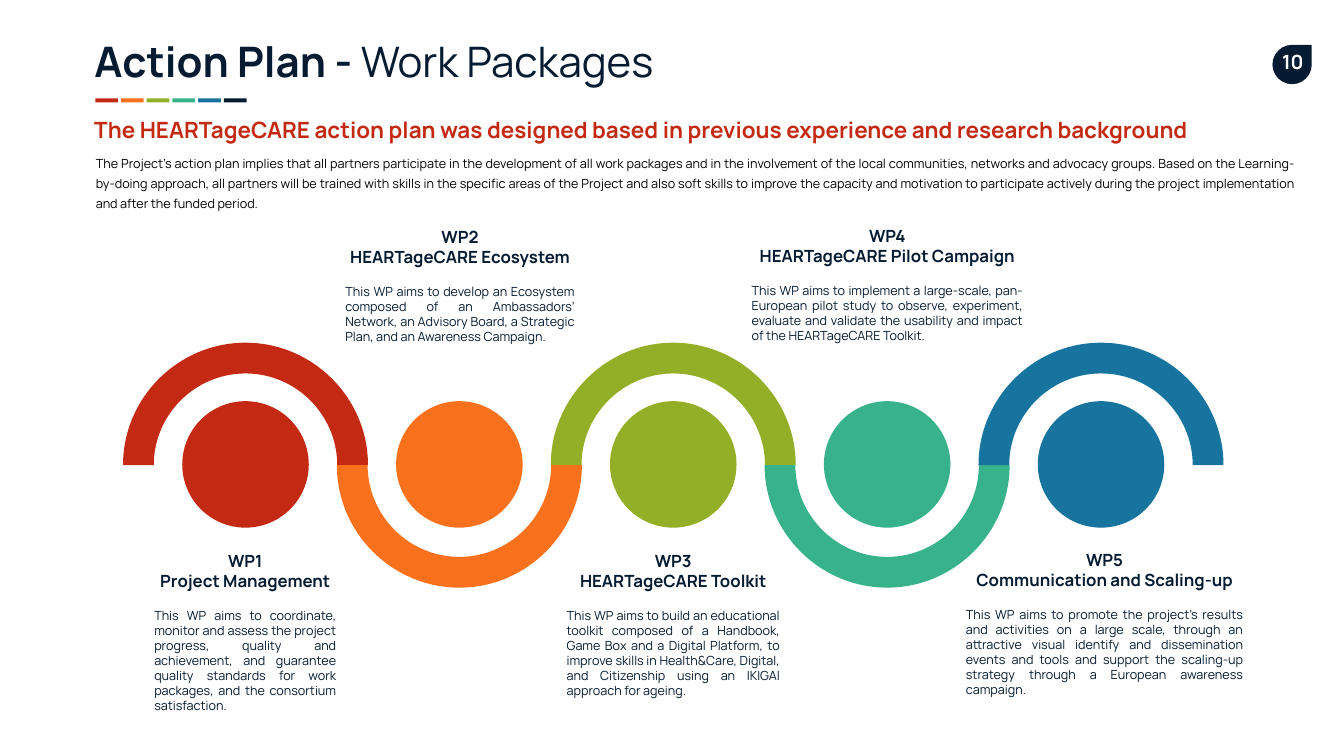
from lxml.etree import Element, SubElement
from pptx import Presentation
from pptx.dml.color import RGBColor
from pptx.enum.shapes import MSO_SHAPE
from pptx.enum.text import MSO_ANCHOR, PP_ALIGN
from pptx.oxml.ns import qn
from pptx.util import Inches, Pt

COLORS = {
    "red": "C42A13",
    "orange": "F9711C",
    "olive": "92AF27",
    "green": "38B28A",
    "blue": "16749F",
    "navy": "041B31",
    "white": "FFFFFF",
    "black": "000000",
}

# Name, description, text box (left, top, width, height), colour
WORK_PACKAGES = [
    ("Project Management",
     "This WP aims to coordinate, monitor and assess the project progress, quality and "
     "achievement, and guarantee quality standards for work packages, and the consortium "
     "satisfaction.",
     (3.06, 10.92, 3.61, 3.66), "red"),
    ("HEARTageCARE Ecosystem",
     "This WP aims to develop an Ecosystem composed of an Ambassadors’ Network, an Advisory "
     "Board, a Strategic Plan, and an Awareness Campaign.",
     (6.85, 4.49, 4.55, 2.84), "orange"),
    ("HEARTageCARE Toolkit",
     "This WP aims to build an educational toolkit composed of a Handbook, Game Box and a "
     "Digital Platform, to improve skills in Health&Care, Digital, and Citizenship using an "
     "IKIGAI approach for ageing.",
     (11.24, 10.92, 4.23, 3.62), "olive"),
    ("HEARTageCARE Pilot Campaign",
     "This WP aims to implement a large-scale, pan-European pilot study to observe, "
     "experiment, evaluate and validate the usability and impact of the HEARTageCARE Toolkit.",
     (14.91, 4.48, 5.38, 2.98), "green"),
    ("Communication and Scaling-up",
     "This WP aims to promote the project’s results and activities on a large scale, through "
     "an attractive visual identify and dissemination events and tools and support the "
     "scaling-up strategy through a European awareness campaign.",
     (19.16, 10.9, 5.5, 3.65), "blue"),
]

INTRO = (
    "The Project’s action plan implies that all partners participate in the development of all "
    "work packages and in the involvement of the local communities, networks and advocacy "
    "groups. Based on the Learning-by-doing approach, all partners will be trained with skills "
    "in the specific areas of the Project and also soft skills to improve the capacity and "
    "motivation to participate actively during the project implementation and after the "
    "funded period."
)

FIRST_CENTER, LAST_CENTER, CENTER_Y = 4.87, 21.84, 9.23
PITCH = (LAST_CENTER - FIRST_CENTER) / (len(WORK_PACKAGES) - 1)
OUTER_RADIUS, INNER_RADIUS = 2.43, 1.82
DISC, DISC_TOP = 2.51, 7.96
CURVE = 0.55  # control point distance of a quarter circle, as a share of its radius


class SlideBuilder:
    font = "Manrope"

    def __init__(self, slide):
        self.slide = slide

    def paint(self, shape, color):
        shape.shadow.inherit = False
        shape.fill.solid()
        shape.fill.fore_color.rgb = RGBColor.from_string(COLORS[color])
        shape.line.fill.background()

    def shape(self, kind, box, color, parent=None):
        shapes = (parent or self.slide).shapes
        shape = shapes.add_shape(kind, *map(Inches, box))
        self.paint(shape, color)
        return shape

    def half_ring(self, center_x, color, direction):
        """Draw half a ring, above the centre line (-1) or below it (1)."""
        corners = []
        for radius, side in ((OUTER_RADIUS, -1), (INNER_RADIUS, 1)):
            corners += [(center_x + side * radius, CENTER_Y),
                        (center_x, CENTER_Y + direction * radius),
                        (center_x - side * radius, CENTER_Y)]
        points = [(Inches(x), Inches(y)) for x, y in corners]
        builder = self.slide.shapes.build_freeform(*points[0])
        builder.add_line_segments(points[1:], close=True)
        ring = builder.convert_to_shape()
        self.paint(ring, color)

        # Bend the four sides that belong to the two arcs
        lines = list(ring._element.iter(qn("a:lnTo")))
        local = [(x - ring.left, y - ring.top) for x, y in points]
        for index in (0, 1, 3, 4):
            self.bend(lines[index], local[index], local[index + 1], index in (0, 3))

    def bend(self, line, start, end, leaves_upright):
        """Turn a straight side into a quarter circle."""
        (x1, y1), (x2, y2) = start, end
        run, rise = (x2 - x1) * CURVE, (y2 - y1) * CURVE
        if leaves_upright:
            controls = [(x1, y1 + rise), (x2 - run, y2)]
        else:
            controls = [(x1 + run, y1), (x2, y2 - rise)]
        curve = Element(qn("a:cubicBezTo"))
        for x, y in controls + [end]:
            SubElement(curve, qn("a:pt"), x=str(round(x)), y=str(round(y)))
        line.getparent().replace(line, curve)

    def style(self, paragraph, size, color="navy", bold=False, align=PP_ALIGN.LEFT):
        paragraph.alignment = align
        for run in paragraph.runs:
            run.font.name = self.font
            run.font.size = Pt(size)
            run.font.bold = bold
            run.font.color.rgb = RGBColor.from_string(COLORS[color])

    def text_box(self, box, text, inset=None):
        text_box = self.slide.shapes.add_textbox(*map(Inches, box))
        frame = text_box.text_frame
        frame.word_wrap = True
        if inset is not None:
            frame.margin_left = frame.margin_right = Inches(inset)
            frame.margin_top = frame.margin_bottom = Inches(inset)
        frame.text = text
        return frame

    def placeholder(self, index, box):
        placeholder = self.slide.placeholders[index]
        placeholder.left, placeholder.top, placeholder.width, placeholder.height = map(Inches, box)
        frame = placeholder.text_frame
        frame.word_wrap = True
        frame.vertical_anchor = MSO_ANCHOR.TOP
        return frame

    def title(self, box, strong, light):
        paragraph = self.placeholder(0, box).paragraphs[0]
        for text in (strong, light):
            paragraph.add_run().text = text
        self.style(paragraph, 60)
        paragraph.runs[0].font.bold = True

    def body(self, box, text):
        frame = self.placeholder(1, box)
        frame.text = text
        paragraph = frame.paragraphs[0]
        self.style(paragraph, 18, "black", align=PP_ALIGN.JUSTIFY)
        paragraph.line_spacing = 1.3
        paragraph.space_before = Pt(0)
        properties = paragraph._p.get_or_add_pPr()
        properties.set("marL", "0")
        properties.set("indent", "0")
        SubElement(properties, qn("a:buNone"))

    def work_package(self, number, name, description, box):
        frame = self.text_box(box, f"WP{number}\n{name}\n{description}", inset=0)
        *headings, detail = frame.paragraphs
        for heading in headings:
            self.style(heading, 24, bold=True, align=PP_ALIGN.CENTER)
        self.style(detail, 18, align=PP_ALIGN.JUSTIFY)
        detail.space_before = Pt(24)


def main():
    presentation = Presentation()
    presentation.slide_width, presentation.slide_height = Inches(26.66), Inches(15)
    slide = presentation.slides.add_slide(presentation.slide_layouts[1])
    builder = SlideBuilder(slide)

    # Title, subtitle and introduction
    builder.title((1.77, 0.65, 14.71, 1.11), "Action Plan - ", "Work Packages")
    subtitle = builder.text_box(
        (1.77, 2.25, 24.89, 0.64),
        "The HEARTageCARE action plan was designed based in previous experience and "
        "research background")
    builder.style(subtitle.paragraphs[0], 32, "red", bold=True)
    builder.body((1.8, 2.96, 23.99, 1.24), INTRO)

    # Colour bars under the title
    bars = slide.shapes.add_group_shape()
    for index, color in enumerate(["red", "orange", "olive", "green", "blue", "navy"]):
        builder.shape(MSO_SHAPE.RECTANGLE, (1.89 + 0.51 * index, 1.95, 0.45, 0.08), color, bars)

    # Page number
    builder.shape(MSO_SHAPE.TEAR, (25.24, 0.89, 0.78, 0.78), "navy")
    page_number = builder.text_box((25.16, 0.9, 0.97, 0.67), "10", inset=0.1)
    page_number.margin_left = page_number.margin_right = Inches(0.2)
    page_number.word_wrap = False
    builder.style(page_number.paragraphs[0], 28, "white", bold=True, align=PP_ALIGN.CENTER)

    # Wave of half rings with a disc and a text for each work package
    for index, (name, description, box, color) in enumerate(WORK_PACKAGES):
        center_x = FIRST_CENTER + PITCH * index
        builder.half_ring(center_x, color, 1 if index % 2 else -1)
        builder.shape(MSO_SHAPE.OVAL, (center_x - DISC / 2, DISC_TOP, DISC, DISC), color)
        builder.work_package(index + 1, name, description, box)

    presentation.save("out.pptx")


if __name__ == "__main__":
    main()
